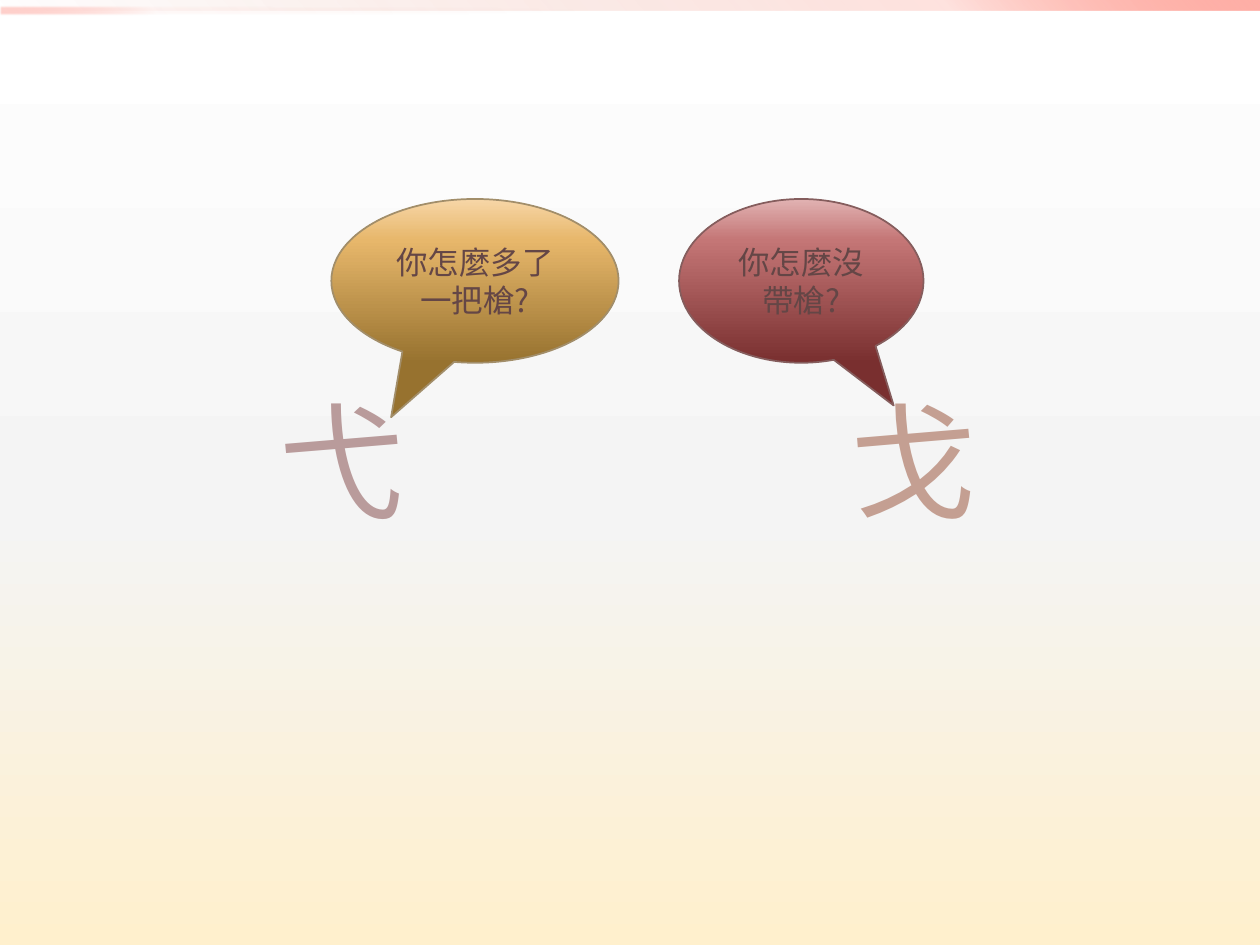
from typing import NamedTuple

from lxml import etree
from pptx import Presentation
from pptx import util as u
from pptx.dml.color import RGBColor
from pptx.enum import shapes, text
from pptx.oxml.ns import qn

WIDE, HIGH = 10, 7.5
FONT = "Noto Sans CJK JP"
WHITE = RGBColor(0xFF, 0xFF, 0xFF)
GREY = RGBColor(0xF4, 0xF4, 0xF4)
CREAM = RGBColor(0xFF, 0xF0, 0xCD)
RUST = RGBColor(0xAD, 0x2D, 0x00)
CORAL = RGBColor(0xFF, 0x6F, 0x5D)
PINK = RGBColor(0xFF, 0xB0, 0xA8)
MAUVE = RGBColor(0xB9, 0x9B, 0x9B)
CLAY = RGBColor(0xC4, 0x9F, 0x92)
PLUM = RGBColor(0x64, 0x46, 0x46)
SAND = RGBColor(0xA2, 0x8E, 0x6A)
WINE = RGBColor(0x85, 0x5D, 0x5D)
GOLDS = (RGBColor(0x97, 0x72, 0x2F), RGBColor(0xE7, 0xB7, 0x6B),
         RGBColor(0xF7, 0xD6, 0xA7))
REDS = (RGBColor(0x79, 0x2F, 0x2F), RGBColor(0xC4, 0x76, 0x76),
        RGBColor(0xE1, 0xB2, 0xB2))


class Bar(NamedTuple):
    top: float
    share: float
    angle: int
    alphas: tuple
    soft: bool


class Glyph(NamedTuple):
    slot: int
    left: float
    word: str
    color: RGBColor
    align: text.PP_ALIGN
    inset: float


class Bubble(NamedTuple):
    left: float
    width: float
    tip: tuple
    colors: tuple
    edge: RGBColor
    words: str


BARS = (Bar(0, 1, 315, (0, 20, 100), False),
        Bar(0.04, 0.5, 135, (0, 5, 60), True))
GLYPHS = (Glyph(1, 0.5, "弋", MAUVE, text.PP_ALIGN.CENTER, 0.1),
          Glyph(2, 5.08, "戈", CLAY, text.PP_ALIGN.LEFT, 1.67))
BUBBLES = (
    Bubble(2.63, 2.28, (-0.292, 0.832), GOLDS, SAND, "你怎麼多了一把槍?"),
    Bubble(5.39, 1.94, (0.378, 0.761), REDS, WINE, "你怎麼沒帶槍?"))


def blend(fill, root, colors: tuple, angle: int, middle: int = 75,
          alphas: tuple = (100, 100, 100)) -> None:
    """Give the fill under root a three-stop gradient, angle clockwise."""
    fill.gradient()
    grad = next(root.iter(qn("a:gradFill")))
    for child in list(grad):
        grad.remove(child)
    stops = etree.SubElement(grad, qn("a:gsLst"))
    for place, color, alpha in zip((0, middle, 100), colors, alphas):
        stop = etree.SubElement(stops, qn("a:gs"), pos=str(place * 1000))
        tint = etree.SubElement(stop, qn("a:srgbClr"), val=str(color))
        if alpha < 100:
            etree.SubElement(tint, qn("a:alpha"), val=str(alpha * 1000))
    etree.SubElement(grad, qn("a:lin"), ang=str(angle * 60000), scaled="0")


def place(shape, left: float, top: float, width: float, height: float) -> None:
    shape.left, shape.top = u.Inches(left), u.Inches(top)
    shape.width, shape.height = u.Inches(width), u.Inches(height)


def style(para, size: int, color: RGBColor, align: text.PP_ALIGN) -> None:
    para.alignment = align
    for run in para.runs:
        run.font.size, run.font.name = u.Pt(size), FONT
        run.font.color.rgb = color
        etree.SubElement(run.font._element, qn("a:ea"), typeface=FONT)


def draw_bar(slide, bar: Bar) -> None:
    shape = slide.shapes.add_shape(
        shapes.MSO_SHAPE.RECTANGLE, 0, u.Inches(bar.top),
        u.Inches(WIDE * bar.share), u.Inches(0.08))
    shape.shadow.inherit = False
    blend(shape.fill, shape._element, (RUST, CORAL, PINK), bar.angle,
          alphas=bar.alphas)
    shape.line.fill.background()
    if bar.soft:
        effect = next(shape._element.iter(qn("a:effectLst")))
        etree.SubElement(effect, qn("a:softEdge"), rad="12700")


def draw_glyph(slide, glyph: Glyph) -> None:
    shape = slide.placeholders[glyph.slot]
    place(shape, glyph.left, 1.75, 4.42, 4.95)
    frame = shape.text_frame
    frame.text = glyph.word
    frame.auto_size = text.MSO_AUTO_SIZE.NONE
    frame.vertical_anchor = text.MSO_ANCHOR.TOP
    frame.margin_top, frame.margin_left = u.Inches(1.29), u.Inches(glyph.inset)
    para = frame.paragraphs[0]
    props = para._p.get_or_add_pPr()
    props.set("marL", "0")
    props.set("indent", "0")
    etree.SubElement(props, qn("a:buNone"))
    para.space_before = u.Pt(0)
    style(para, 72, glyph.color, glyph.align)


def draw_bubble(slide, bubble: Bubble) -> None:
    shape = slide.shapes.add_shape(
        shapes.MSO_SHAPE.OVAL_CALLOUT, u.Inches(bubble.left), u.Inches(1.58),
        u.Inches(bubble.width), u.Inches(1.3))
    shape.shadow.inherit = False
    shape.adjustments[0], shape.adjustments[1] = bubble.tip
    blend(shape.fill, shape._element, bubble.colors, 270)
    shape.line.color.rgb, shape.line.width = bubble.edge, u.Pt(1)
    frame = shape.text_frame
    frame.text, frame.word_wrap = bubble.words, True
    frame.vertical_anchor = text.MSO_ANCHOR.MIDDLE
    style(frame.paragraphs[0], 18, PLUM, text.PP_ALIGN.CENTER)


def main() -> None:
    deck = Presentation()
    deck.slide_width, deck.slide_height = u.Inches(WIDE), u.Inches(HIGH)
    slide = deck.slides.add_slide(deck.slide_layouts[3])
    title = slide.shapes.title._element
    title.getparent().remove(title)
    blend(slide.background.fill, slide._element, (WHITE, GREY, CREAM), 90, 55)
    for bar in BARS:
        draw_bar(slide, bar)
    for glyph in GLYPHS:
        draw_glyph(slide, glyph)
    for bubble in BUBBLES:
        draw_bubble(slide, bubble)
    deck.save("out.pptx")


if __name__ == "__main__":
    main()
